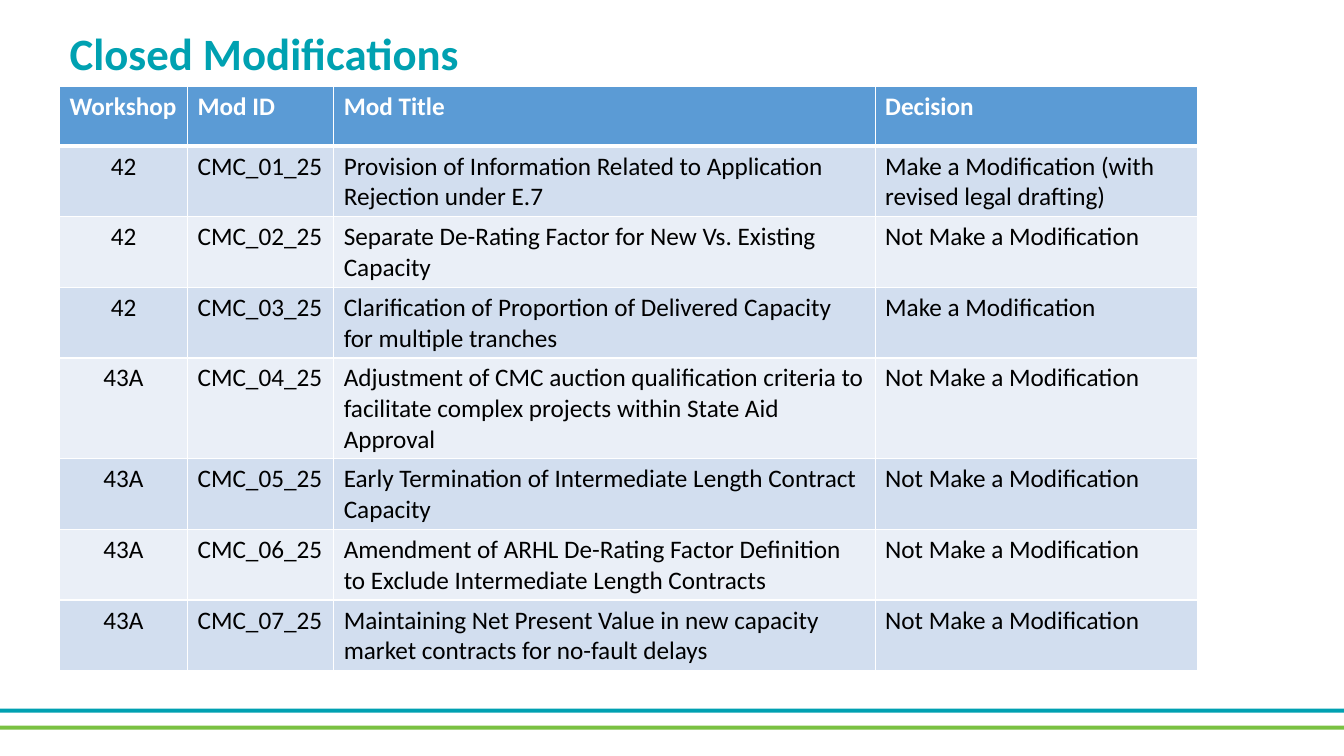
import pptx
import pptx.util
import pptx.dml.color
import pptx.enum.shapes
import pptx.enum.text
import pptx.oxml.ns
import lxml.etree

Inches = pptx.util.Inches
COLORS = {
    "teal": "00A1B1", "green": "7AC142", "white": "FFFFFF", "black": "000000",
    "header": "5B9BD5", "odd_row": "D2DEEF", "even_row": "EAEFF7",
}
FONT = "Calibri"
LEFT = 0.59
COLUMN_WIDTHS = [1.27, 1.45, 5.37, 3.2]
HEADER_HEIGHT, ROW_HEIGHT = 0.59, 0.66


def add_run(paragraph, text, size, color, bold):
    run = paragraph.add_run()
    run.text = text
    run.font.name = FONT
    run.font.size = pptx.util.Pt(size)
    run.font.bold = bold
    run.font.color.rgb = pptx.dml.color.RGBColor.from_string(COLORS[color])


def add_border(cell, side, points):
    properties = cell._tc.get_or_add_tcPr()
    line = lxml.etree.SubElement(properties, pptx.oxml.ns.qn("a:" + side),
                                 w=str(pptx.util.Pt(points)))
    fill = lxml.etree.SubElement(line, pptx.oxml.ns.qn("a:solidFill"))
    lxml.etree.SubElement(fill, pptx.oxml.ns.qn("a:srgbClr"), val=COLORS["white"])


presentation = pptx.Presentation()
presentation.slide_width = Inches(13.33)
presentation.slide_height = Inches(7.5)
slide = presentation.slides.add_slide(presentation.slide_layouts[5])

# Footer stripes across the full width
for color, top, height in [("green", 7.2, 0.04), ("teal", 7.03, 0.04)]:
    stripe = slide.shapes.add_shape(
        pptx.enum.shapes.MSO_SHAPE.RECTANGLE,
        0, Inches(top), presentation.slide_width, Inches(height))
    stripe.shadow.inherit = False
    stripe.fill.solid()
    stripe.fill.fore_color.rgb = pptx.dml.color.RGBColor.from_string(COLORS[color])
    stripe.line.fill.background()

# Title
title = slide.shapes.title
title.left, title.top = Inches(LEFT), Inches(0.21)
title.width, title.height = Inches(9.85), Inches(0.64)
title.text_frame.word_wrap = True
title.text_frame.auto_size = pptx.enum.text.MSO_AUTO_SIZE.SHAPE_TO_FIT_TEXT
title.text_frame.vertical_anchor = pptx.enum.text.MSO_ANCHOR.TOP
title_paragraph = title.text_frame.paragraphs[0]
title_paragraph.alignment = pptx.enum.text.PP_ALIGN.LEFT
add_run(title_paragraph, "Closed Modifications", 32, "teal", True)

# Table content
REJECTED = "Not Make a Modification"
modifications = [
    ("42", "Provision of Information Related to Application Rejection under E.7",
     "Make a Modification (with revised legal drafting)"),
    ("42", "Separate De-Rating Factor for New Vs. Existing Capacity", REJECTED),
    ("42", "Clarification of Proportion of Delivered Capacity for multiple tranches",
     "Make a Modification"),
    ("43A", "Adjustment of CMC auction qualification criteria to facilitate "
     "complex projects within State Aid Approval", REJECTED),
    ("43A", "Early Termination of Intermediate Length Contract Capacity", REJECTED),
    ("43A", "Amendment of ARHL De-Rating Factor Definition to Exclude "
     "Intermediate Length Contracts", REJECTED),
    ("43A", "Maintaining Net Present Value in new capacity market contracts "
     "for no-fault delays", REJECTED),
]
rows = [("Workshop", "Mod ID", "Mod Title", "Decision")]
for number, (workshop, mod_title, decision) in enumerate(modifications, start=1):
    rows.append((workshop, f"CMC_{number:02}_25", mod_title, decision))

# Table of modifications
table = slide.shapes.add_table(
    len(rows), len(COLUMN_WIDTHS), Inches(LEFT), Inches(0.86),
    Inches(sum(COLUMN_WIDTHS)),
    Inches(HEADER_HEIGHT + ROW_HEIGHT * len(modifications))).table
for column, width in zip(table.columns, COLUMN_WIDTHS):
    column.width = Inches(width)

for row_index, texts in enumerate(rows):
    is_header = row_index == 0
    table.rows[row_index].height = Inches(HEADER_HEIGHT if is_header else ROW_HEIGHT)
    fill_color = "header" if is_header else "odd_row" if row_index % 2 else "even_row"
    for column_index, text in enumerate(texts):
        cell = table.cell(row_index, column_index)
        for side in ["lnL", "lnR", "lnT", "lnB"]:
            under_header = (row_index, side) in [(0, "lnB"), (1, "lnT")]
            add_border(cell, side, 3 if under_header else 1)
        cell.fill.solid()
        cell.fill.fore_color.rgb = pptx.dml.color.RGBColor.from_string(COLORS[fill_color])
        paragraph = cell.text_frame.paragraphs[0]
        if column_index == 0 and not is_header:
            paragraph.alignment = pptx.enum.text.PP_ALIGN.CENTER
        add_run(paragraph, text, 18, "white" if is_header else "black", is_header)

presentation.save("out.pptx")
